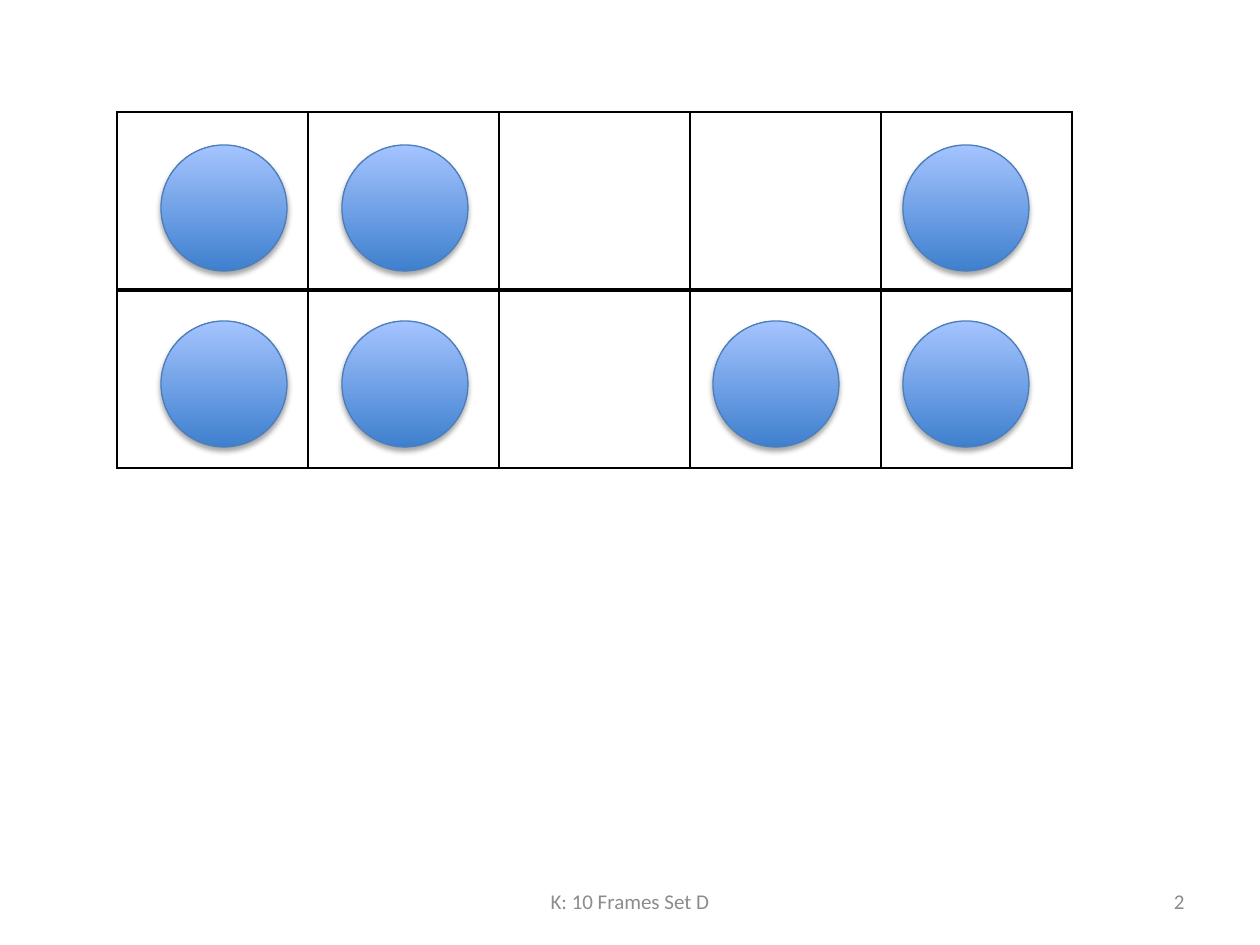
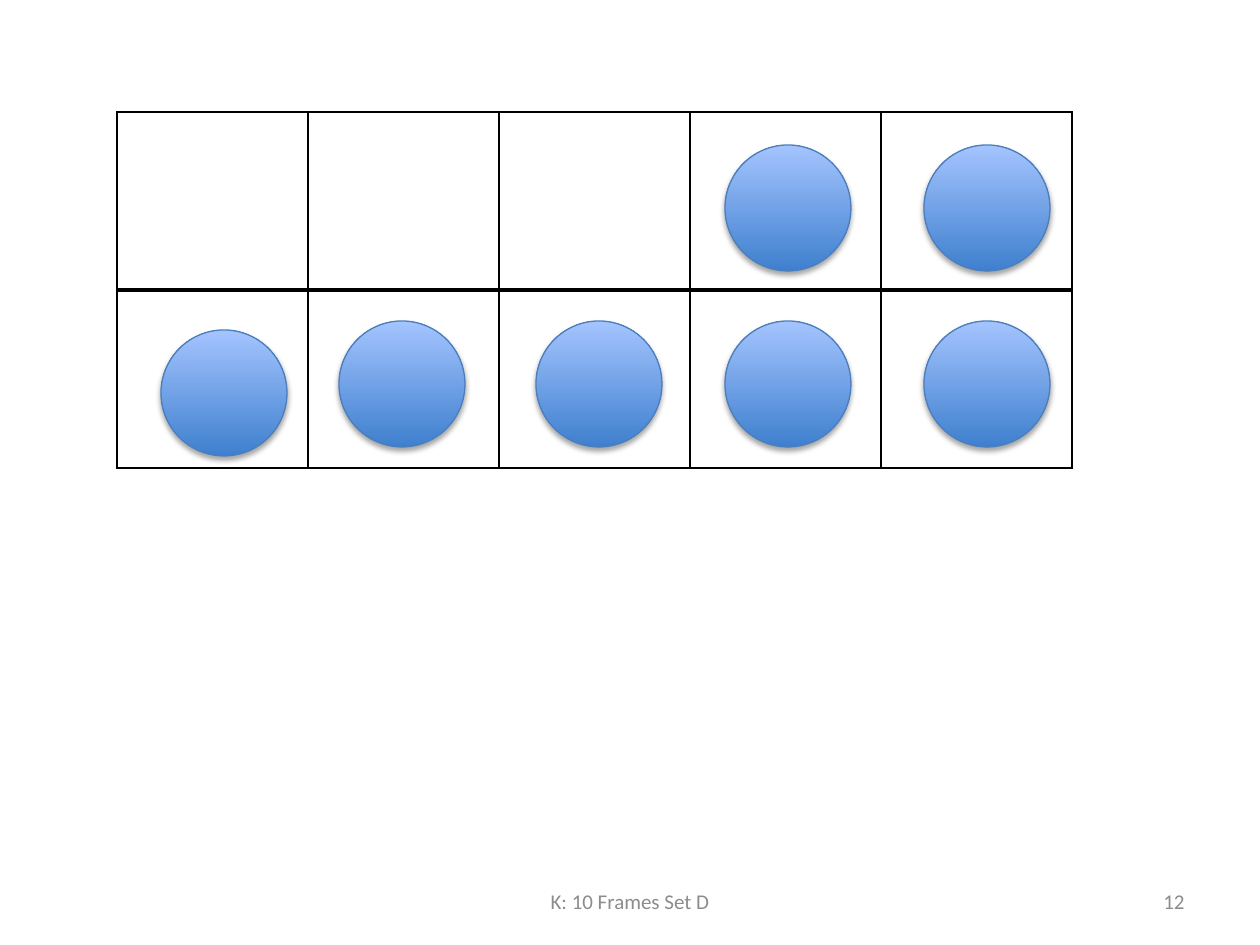
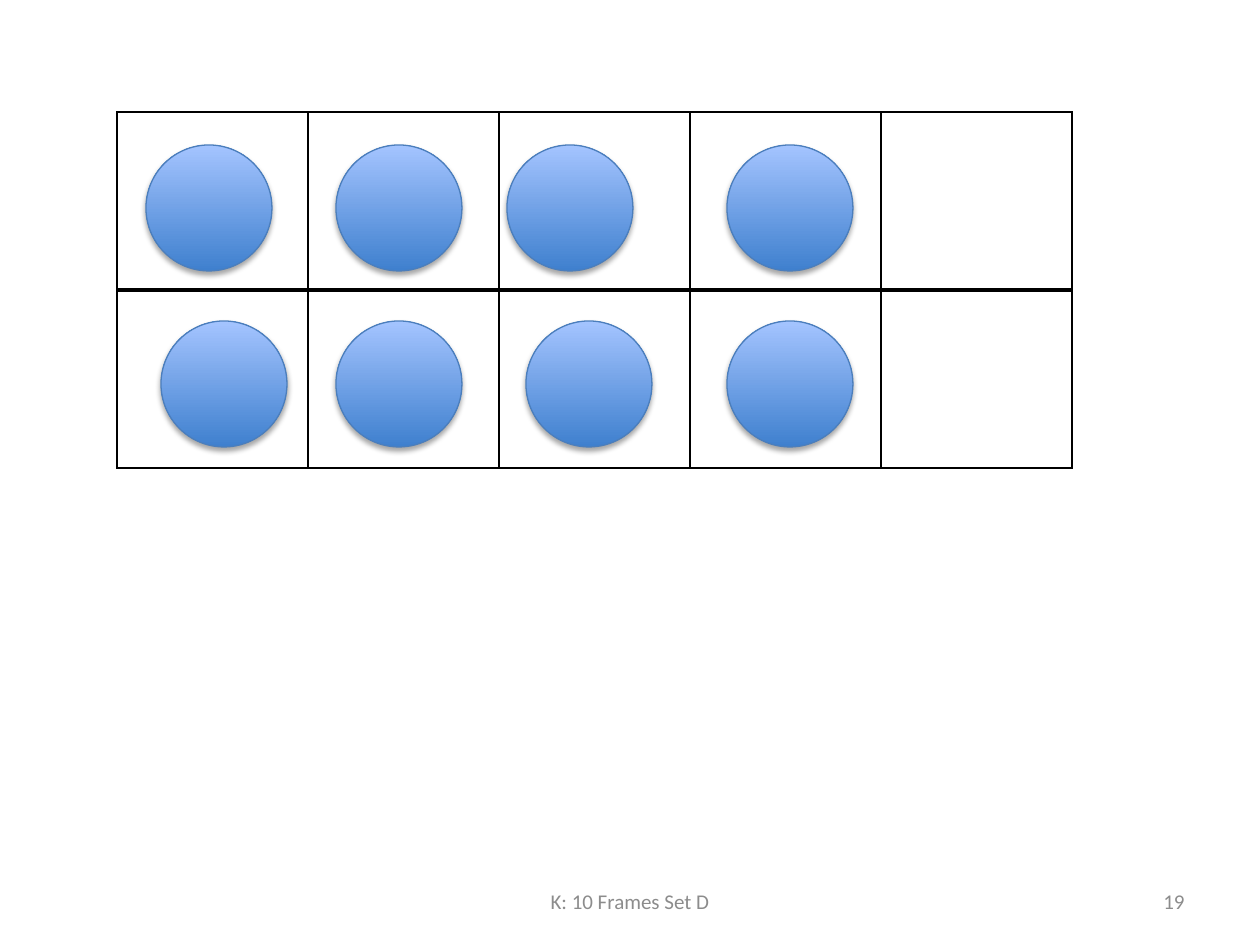
from lxml.etree import SubElement
from pptx import Presentation
from pptx.dml.color import RGBColor
from pptx.enum.shapes import MSO_SHAPE
from pptx.enum.text import MSO_ANCHOR, PP_ALIGN
from pptx.oxml.ns import qn
from pptx.util import Emu, Pt

COLORS = {
    "paper": "FFFFFF",
    "grid": "000000",
    "footer": "8C8C8C",
    "counter_bottom": "3F80CE",
    "counter_top": "A4C4FF",
    "counter_line": "4B7EBC",
    "shadow": "000000",
}
FONT = "Calibri"
PIXELS_PER_INCH = 126
COLUMNS, ROWS = 5, 2
CELL_WIDTH, CELL_HEIGHT = 191, 178
COUNTER_SIZE = 126
UPPER, LOWER = 145, 321

FRAMES = [
    ("2", [(161, UPPER), (342, UPPER), (903, UPPER),
           (161, LOWER), (342, LOWER), (713, LOWER), (903, LOWER)]),
    ("12", [(725, UPPER), (924, UPPER),
            (161, 330), (339, LOWER), (536, LOWER), (725, LOWER), (924, LOWER)]),
    ("19", [(146, UPPER), (336, UPPER), (507, UPPER), (727, UPPER),
            (161, LOWER), (336, LOWER), (526, LOWER), (727, LOWER)]),
]


def px(length):
    return Emu(round(length * 914400 / PIXELS_PER_INCH))


def color(name):
    return RGBColor.from_string(COLORS[name])


def add_border(cell, side, points):
    line = SubElement(cell._tc.get_or_add_tcPr(), qn(f"a:ln{side}"), w=str(Pt(points)))
    fill = SubElement(line, qn("a:solidFill"))
    SubElement(fill, qn("a:srgbClr"), val=COLORS["grid"])


def add_ten_frame(page):
    frame = page.shapes.add_table(
        ROWS, COLUMNS, px(117), px(112), px(COLUMNS * CELL_WIDTH), px(ROWS * CELL_HEIGHT))
    table = frame.table
    table.first_row = False
    table.horz_banding = False
    for column in table.columns:
        column.width = px(CELL_WIDTH)
    for index, row in enumerate(table.rows):
        row.height = px(CELL_HEIGHT)
        middle_side = "B" if index == 0 else "T"
        for cell in row.cells:
            for side in "LRTB":
                add_border(cell, side, 2 if side == middle_side else 1)
            cell.fill.solid()
            cell.fill.fore_color.rgb = color("paper")


def add_shadow(shape):
    effects = SubElement(shape._element.spPr, qn("a:effectLst"))
    shadow = SubElement(effects, qn("a:outerShdw"), blurRad=str(Pt(3.1)),
                        dist=str(Pt(1.8)), dir="5400000", rotWithShape="0")
    tone = SubElement(shadow, qn("a:srgbClr"), val=COLORS["shadow"])
    SubElement(tone, qn("a:alpha"), val="35000")


def add_counter(page, left, top):
    counter = page.shapes.add_shape(
        MSO_SHAPE.OVAL, px(left), px(top), px(COUNTER_SIZE), px(COUNTER_SIZE))
    counter.fill.gradient()
    counter.fill.gradient_angle = 90
    for stop, name in zip(counter.fill.gradient_stops, ("counter_bottom", "counter_top")):
        stop.color.rgb = color(name)
    counter.line.color.rgb = color("counter_line")
    counter.line.width = Pt(0.75)
    add_shadow(counter)


def add_footer(page, text, left, width, alignment):
    box = page.shapes.add_textbox(px(left), px(876), px(width), px(50))
    box.text_frame.word_wrap = True
    box.text_frame.vertical_anchor = MSO_ANCHOR.MIDDLE
    para = box.text_frame.paragraphs[0]
    para.text = text
    para.alignment = alignment
    span = para.runs[0]
    span.font.name = FONT
    span.font.size = Pt(12)
    span.font.color.rgb = color("footer")


def main():
    deck = Presentation()
    deck.slide_width, deck.slide_height = px(1260), px(945)
    for number, counters in FRAMES:
        page = deck.slides.add_slide(deck.slide_layouts[6])
        add_ten_frame(page)
        add_footer(page, "K: 10 Frames Set D", 430, 400, PP_ALIGN.CENTER)
        add_footer(page, number, 903, 294, PP_ALIGN.RIGHT)
        for left, top in counters:
            add_counter(page, left, top)
    deck.save("out.pptx")


if __name__ == "__main__":
    main()
